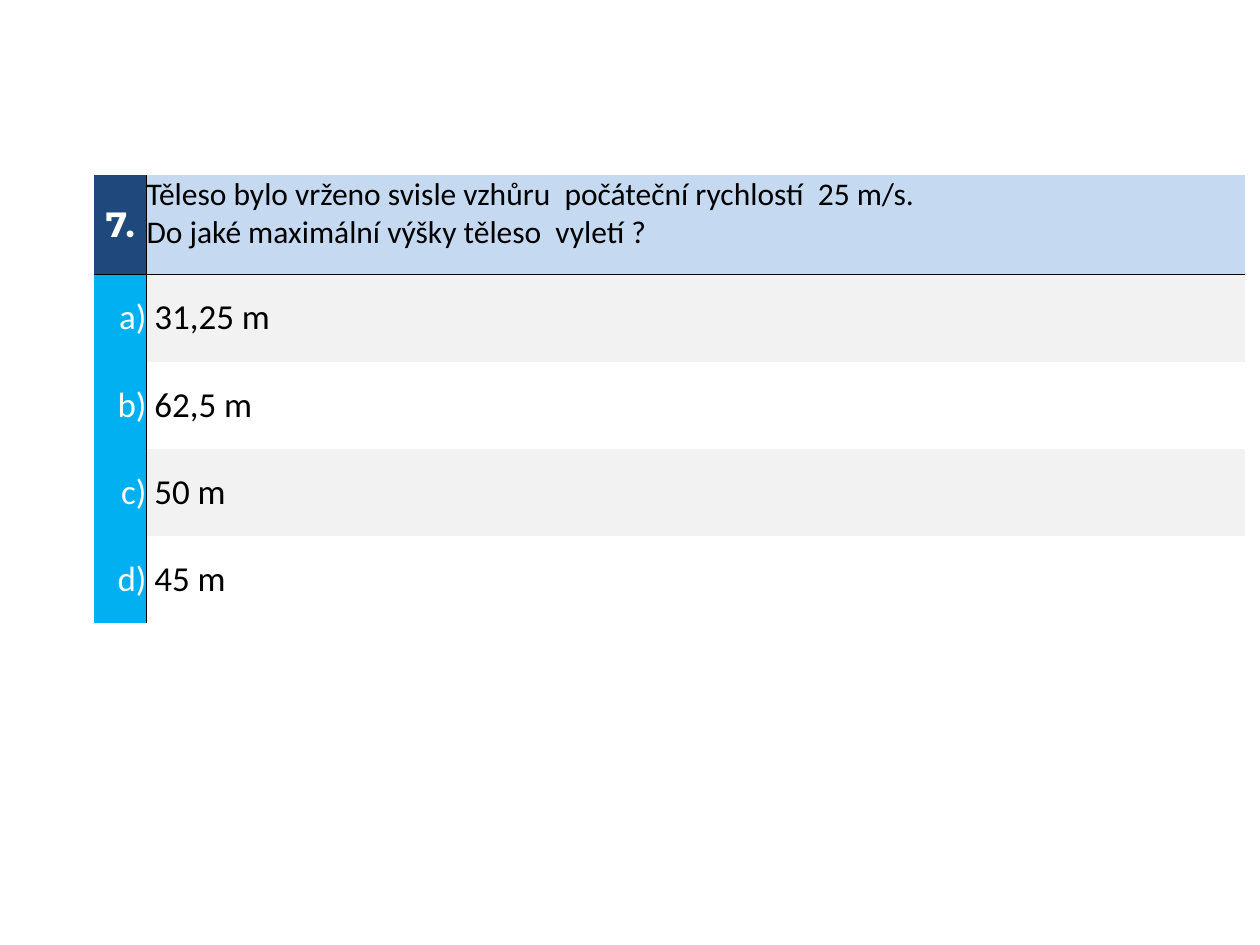
"""Build a quiz slide with one question and four possible answers."""
from dataclasses import dataclass
from typing import Optional

from lxml import etree
from pptx import Presentation
from pptx.dml.color import RGBColor
from pptx.enum.text import MSO_ANCHOR, PP_ALIGN
from pptx.oxml.ns import qn
from pptx.table import _Cell
from pptx.util import Pt

LEFT, CENTER, RIGHT = PP_ALIGN.LEFT, PP_ALIGN.CENTER, PP_ALIGN.RIGHT
TOP, MIDDLE = MSO_ANCHOR.TOP, MSO_ANCHOR.MIDDLE

BLACK = RGBColor(0x00, 0x00, 0x00)
WHITE = RGBColor(0xFF, 0xFF, 0xFF)
NAVY = RGBColor(0x1F, 0x49, 0x7D)
PALE_BLUE = RGBColor(0xC5, 0xD9, 0xF1)
SKY_BLUE = RGBColor(0x00, 0xB0, 0xF0)
PALE_GRAY = RGBColor(0xF2, 0xF2, 0xF2)

COLUMN_WIDTHS = (30, 627.5)
QUESTION_HEIGHT, ANSWER_HEIGHT = 56.75, 49.85
ANSWER_INDENT = 4.5
BORDER_WIDTH = 0.5

QUESTION = (
    "Těleso bylo vrženo svisle vzhůru  počáteční rychlostí  25 m/s.",
    "Do jaké maximální výšky těleso  vyletí ?",
)
ANSWERS = (("a)", "31,25 m"), ("b)", "62,5 m"), ("c)", "50 m"), ("d)", "45 m"))


@dataclass(frozen=True)
class CellStyle:
    """Look of one kind of table cell."""

    fill: Optional[RGBColor]
    color: RGBColor
    size: float = 20
    font: str = "Calibri"
    bold: bool = False
    align: PP_ALIGN = LEFT
    anchor: MSO_ANCHOR = MIDDLE
    indent: float = 0


NUMBER_STYLE = CellStyle(NAVY, WHITE, font="Montserrat", bold=True, align=CENTER)
QUESTION_STYLE = CellStyle(PALE_BLUE, BLACK, size=18, anchor=TOP)
LETTER_STYLE = CellStyle(SKY_BLUE, WHITE, align=RIGHT)
ANSWER_STYLES = (
    CellStyle(PALE_GRAY, BLACK, indent=ANSWER_INDENT),
    CellStyle(None, BLACK, indent=ANSWER_INDENT),
)


def set_borders(cell: _Cell, row: int, column: int) -> None:
    """Rule the lines between the columns and below the question."""
    visible = {"L": column == 1, "R": column == 0, "T": row == 1, "B": row == 0}
    properties = cell._tc.get_or_add_tcPr()
    for side, shown in visible.items():
        line = etree.SubElement(properties, qn(f"a:ln{side}"), w=str(Pt(BORDER_WIDTH)))
        if shown:
            fill = etree.SubElement(line, qn("a:solidFill"))
            etree.SubElement(fill, qn("a:srgbClr"), val=str(BLACK))
        else:
            etree.SubElement(line, qn("a:noFill"))


def fill_cell(cell: _Cell, lines: tuple[str, ...], style: CellStyle) -> None:
    """Write the lines into a cell and format it."""
    cell_format = {
        "margin_left": Pt(style.indent),
        "margin_right": Pt(0),
        "margin_top": Pt(0),
        "margin_bottom": Pt(0),
        "vertical_anchor": style.anchor,
    }
    for name, value in cell_format.items():
        setattr(cell, name, value)
    if style.fill is None:
        cell.fill.background()
    else:
        cell.fill.solid()
        cell.fill.fore_color.rgb = style.fill
    cell.text_frame.text = "\n".join(lines)
    font_format = {"name": style.font, "size": Pt(style.size), "bold": style.bold}
    for paragraph in cell.text_frame.paragraphs:
        paragraph.alignment = style.align
        for run in paragraph.runs:
            for name, value in font_format.items():
                setattr(run.font, name, value)
            run.font.color.rgb = style.color


def main() -> None:
    """Create the presentation and save it."""
    presentation = Presentation()
    presentation.slide_width, presentation.slide_height = Pt(720), Pt(540)
    slide = presentation.slides.add_slide(presentation.slide_layouts[6])

    rows = [((("7.",), NUMBER_STYLE), (QUESTION, QUESTION_STYLE))]
    for index, (letter, answer) in enumerate(ANSWERS):
        rows.append((((letter,), LETTER_STYLE), ((answer,), ANSWER_STYLES[index % 2])))

    height = QUESTION_HEIGHT + ANSWER_HEIGHT * len(ANSWERS)
    table = slide.shapes.add_table(
        len(rows), len(COLUMN_WIDTHS), Pt(53.75), Pt(100), Pt(sum(COLUMN_WIDTHS)), Pt(height)
    ).table
    table.first_row = table.horz_banding = False
    for column, width in zip(table.columns, COLUMN_WIDTHS):
        column.width = Pt(width)
    for row_index, row in enumerate(rows):
        table.rows[row_index].height = Pt(ANSWER_HEIGHT if row_index else QUESTION_HEIGHT)
        for column_index, (lines, style) in enumerate(row):
            cell = table.cell(row_index, column_index)
            set_borders(cell, row_index, column_index)
            fill_cell(cell, lines, style)

    presentation.save("out.pptx")


if __name__ == "__main__":
    main()
